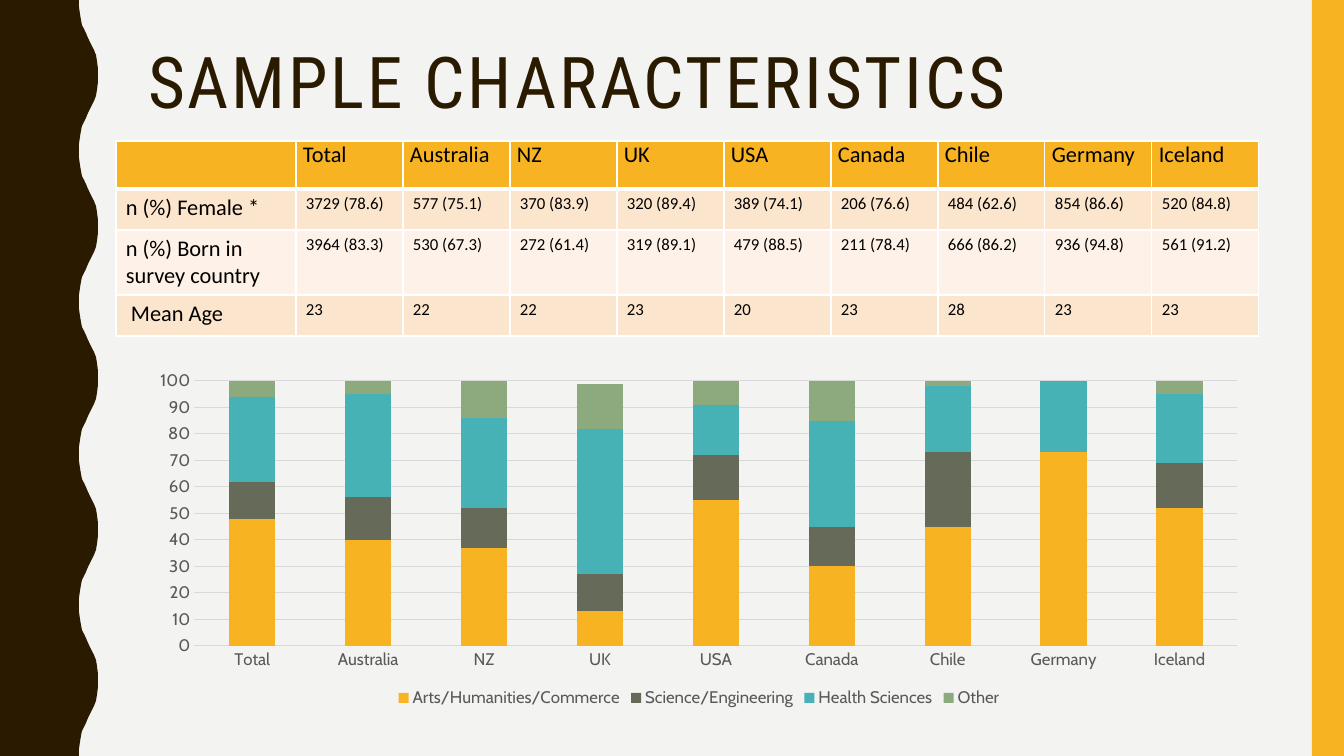
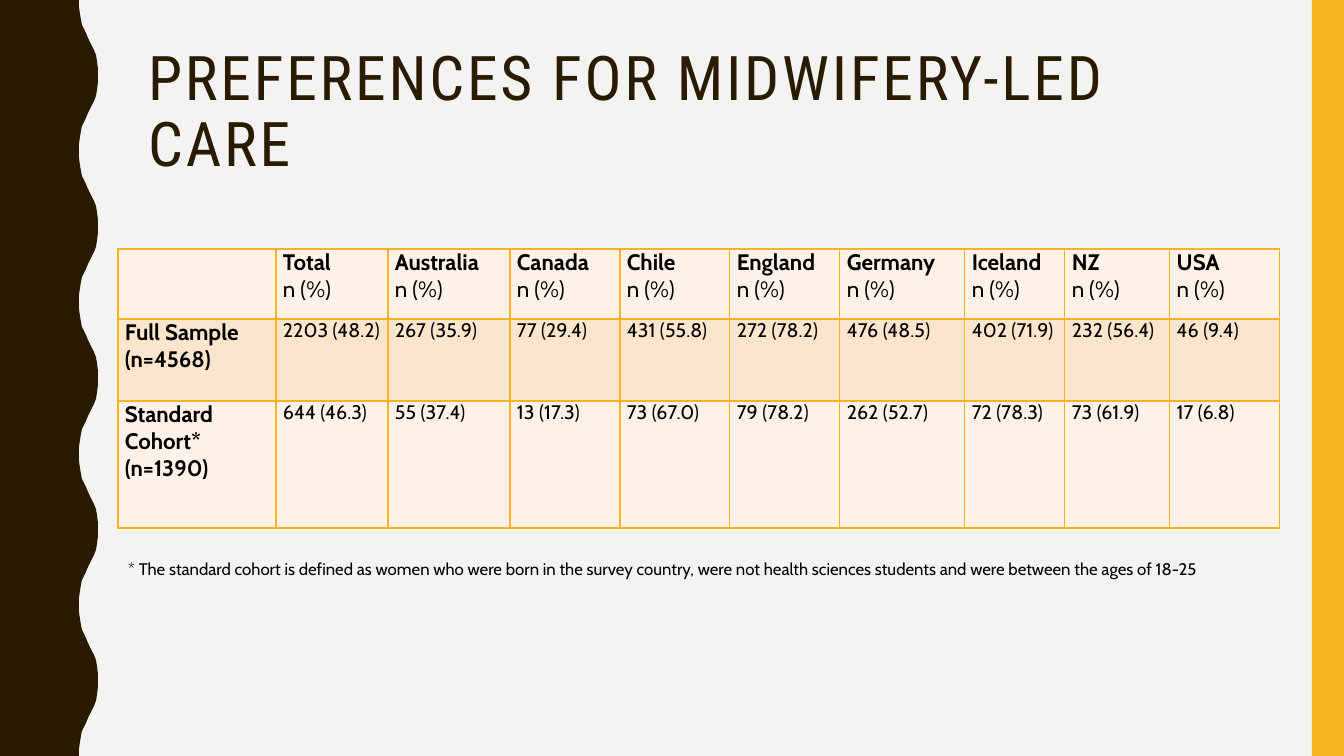
from lxml import etree
from pptx import Presentation
from pptx.chart.data import CategoryChartData
from pptx.dml.color import RGBColor
from pptx.enum.chart import XL_CHART_TYPE, XL_LEGEND_POSITION, XL_TICK_MARK
from pptx.enum.shapes import MSO_SHAPE
from pptx.enum.text import MSO_ANCHOR, MSO_AUTO_SIZE, PP_ALIGN
from pptx.oxml.ns import qn
from pptx.util import Pt

# Shared style
EMU_PER_PX = 914400 / 100.8
WIDTH, HEIGHT = 1344, 756
PAPER, BROWN, AMBER = "F3F3F2", "2A1A00", "F8B323"
PEACH, CREAM, WHITE, BLACK = "FCE5CD", "FEF2E8", "FFFFFF", "000000"
GREY, GRID = "595959", "D9D9D9"
SERIES_COLORS = [AMBER, "656A59", "46B2B5", "8CAA7E"]
TITLE_FONT, BODY_FONT, TABLE_FONT = "Roboto Condensed", "Cabin", "Calibri"

# Half a wave of the left band as (x, y); the other half mirrors it
WAVE_PERIOD, WAVE_COUNT = 151.2, 5
HALF_WAVE = [(79, 0), (79, 7), (80, 14), (81, 20), (82, 25), (84, 29), (86, 33),
             (88, 38), (90, 42), (92, 46), (94, 50), (96, 55), (97, 61), (98, 69)]

# Slide 1 content
COUNTRIES = ["Total", "Australia", "NZ", "UK", "USA", "Canada", "Chile",
             "Germany", "Iceland"]
SAMPLE = [
    ["n (%) Female *", "3729 (78.6)", "577 (75.1)", "370 (83.9)", "320 (89.4)",
     "389 (74.1)", "206 (76.6)", "484 (62.6)", "854 (86.6)", "520 (84.8)"],
    ["n (%) Born in survey country", "3964 (83.3)", "530 (67.3)", "272 (61.4)",
     "319 (89.1)", "479 (88.5)", "211 (78.4)", "666 (86.2)", "936 (94.8)",
     "561 (91.2)"],
    [" Mean Age", "23", "22", "22", "23", "20", "23", "28", "23", "23"],
]
FIELDS = {
    "Arts/Humanities/Commerce": [48, 40, 37, 13, 55, 30, 45, 73, 52],
    "Science/Engineering": [14, 16, 15, 14, 17, 15, 28, 0, 17],
    "Health Sciences": [32, 39, 34, 55, 19, 40, 25, 27, 26],
    "Other": [6, 5, 14, 17, 9, 15, 2, 0, 6],
}

# Slide 2 content
CARE_COUNTRIES = ["Total", "Australia", "Canada", "Chile", "England", "Germany",
                  "Iceland", "NZ", "USA"]
CARE = [
    (["Full Sample", "(n=4568)"],
     ["2203 (48.2)", "267 (35.9)", "77 (29.4)", "431 (55.8)", "272 (78.2)",
      "476 (48.5)", "402 (71.9)", "232 (56.4)", "46 (9.4)"]),
    (["Standard Cohort*", "(n=1390)"],
     ["644 (46.3)", "55 (37.4)", "13 (17.3)", "73 (67.0)", "79 (78.2)",
      "262 (52.7)", "72 (78.3)", "73 (61.9)", "17 (6.8)"]),
]
FOOTNOTE = ("* The standard cohort is defined as women who were born in the survey "
            "country, were not health sciences students and were between the ages "
            "of 18-25")


def px(n):
    return round(n * EMU_PER_PX)


def rgb(color):
    return RGBColor.from_string(color)


def set_font(font, size, color, name, bold=False):
    font.size, font.name, font.bold = Pt(size), name, bold
    font.color.rgb = rgb(color)


def add_run(p, text, size, color, name, bold=False):
    r = p.add_run()
    r.text = text
    set_font(r.font, size, color, name, bold)
    return r


def paint(sp, color):
    sp.shadow.inherit = False
    sp.fill.solid()
    sp.fill.fore_color.rgb = rgb(color)
    sp.line.fill.background()


def add_bands(s):
    # Wavy band on the left
    wave = HALF_WAVE + [(98, WAVE_PERIOD / 2)]
    wave += [(x, WAVE_PERIOD - y) for x, y in reversed(HALF_WAVE)]
    points = [(x, y + i * WAVE_PERIOD) for i in range(WAVE_COUNT) for x, y in wave]
    fb = s.shapes.build_freeform(0, 0, scale=EMU_PER_PX)
    fb.add_line_segments(points + [(0, HEIGHT)], close=True)
    paint(fb.convert_to_shape(), BROWN)
    # Straight band on the right
    paint(s.shapes.add_shape(MSO_SHAPE.RECTANGLE, px(1312), 0, px(32), px(HEIGHT)),
          AMBER)


def add_slide(prs, title, size, title_height):
    s = prs.slides.add_slide(prs.slide_layouts[5])
    s.background.fill.solid()
    s.background.fill.fore_color.rgb = rgb(PAPER)
    add_bands(s)
    sp = s.shapes.title
    sp.left, sp.top, sp.width, sp.height = map(px, (138, 42, 1122, title_height))
    tf = sp.text_frame
    tf.word_wrap, tf.auto_size = True, MSO_AUTO_SIZE.NONE
    tf.vertical_anchor = MSO_ANCHOR.TOP
    p = tf.paragraphs[0]
    p.alignment, p.line_spacing = PP_ALIGN.LEFT, 0.9
    r = add_run(p, title, size, BROWN, TITLE_FONT)
    r.font._element.set("spc", "200")
    return s


def set_borders(cell, color, top=1, bottom=1):
    tc_pr = cell._tc.get_or_add_tcPr()
    for side, width in (("L", 1), ("R", 1), ("T", top), ("B", bottom)):
        ln = etree.SubElement(tc_pr, qn(f"a:ln{side}"), w=str(Pt(width)))
        fill = etree.SubElement(ln, qn("a:solidFill"))
        etree.SubElement(fill, qn("a:srgbClr"), val=color)


def add_table(s, left, top, widths, heights, rows, fills, line, font,
              insets, header_rule=1):
    """Each cell is a list of (text, size, bold) paragraphs; insets go by row."""
    table = s.shapes.add_table(len(rows), len(widths), px(left), px(top),
                               px(sum(widths)), px(sum(heights))).table
    table.first_row = table.horz_banding = False
    for column, width in zip(table.columns, widths):
        column.width = px(width)
    for i, row in enumerate(rows):
        table.rows[i].height = px(heights[i])
        side, edge = insets[i]
        for j, lines in enumerate(row):
            cell = table.cell(i, j)
            cell.margin_left = cell.margin_right = px(side)
            cell.margin_top = cell.margin_bottom = px(edge)
            set_borders(cell, line, top=header_rule if i == 1 else 1,
                        bottom=header_rule if i == 0 else 1)
            cell.fill.solid()
            cell.fill.fore_color.rgb = rgb(fills[i])
            tf = cell.text_frame
            for k, (text, size, bold) in enumerate(lines):
                p = tf.add_paragraph() if k else tf.paragraphs[0]
                add_run(p, text, size, BLACK, font, bold)


def add_stacked_chart(s, left, top, width, height, categories, series):
    data = CategoryChartData()
    data.categories = categories
    for name, values in series.items():
        data.add_series(name, values)
    chart = s.shapes.add_chart(XL_CHART_TYPE.COLUMN_STACKED, px(left), px(top),
                               px(width), px(height), data).chart
    set_font(chart.font, 12, GREY, BODY_FONT)
    chart.has_title = False
    chart.has_legend = True
    chart.legend.position = XL_LEGEND_POSITION.BOTTOM
    chart.legend.include_in_layout = False
    set_font(chart.legend.font, 12, GREY, BODY_FONT)
    # Bars
    plot = chart.plots[0]
    plot.gap_width, plot.overlap, plot.vary_by_categories = 150, 100, False
    for ser, color in zip(plot.series, SERIES_COLORS):
        ser.format.fill.solid()
        ser.format.fill.fore_color.rgb = rgb(color)
    # Axes
    for axis in (chart.category_axis, chart.value_axis):
        axis.major_tick_mark = axis.minor_tick_mark = XL_TICK_MARK.NONE
        set_font(axis.tick_labels.font, 12, GREY, BODY_FONT)
    values = chart.value_axis
    values.minimum_scale, values.maximum_scale, values.major_unit = 0, 100, 10
    values.format.line.fill.background()
    for line in (chart.category_axis.format.line, values.major_gridlines.format.line):
        line.color.rgb = rgb(GRID)
        line.width = Pt(0.75)


def add_note(s, left, top, width, height, text):
    tf = s.shapes.add_textbox(px(left), px(top), px(width), px(height)).text_frame
    tf.word_wrap = True
    add_run(tf.paragraphs[0], text, 12, BLACK, BODY_FONT)


def sample_slide(prs):
    s = add_slide(prs, "SAMPLE CHARACTERISTICS", 51, 164)
    rows = [[[]] + [[(name, 16, False)] for name in COUNTRIES]]
    for label, *values in SAMPLE:
        rows.append([[(label, 16, False)]] + [[(v, 12, False)] for v in values])
    add_table(s, 116, 141, [180] + [107] * 9, [48, 41, 65, 41], rows,
              [AMBER, PEACH, CREAM, PEACH], WHITE, TABLE_FONT,
              [(7, 0)] + [(10, 5)] * 3, header_rule=3)
    add_stacked_chart(s, 138, 364, 1122, 348, COUNTRIES, FIELDS)


def care_slide(prs):
    s = add_slide(prs, "PREFERENCES FOR MIDWIFERY-LED CARE", 44, 106)
    rows = [[[]] + [[(name, 16, True), ("n (%)", 16, False)]
                    for name in CARE_COUNTRIES]]
    for labels, values in CARE:
        rows.append([[(text, 16, True) for text in labels]]
                    + [[(v, 14, False)] for v in values])
    add_table(s, 118, 249, [158, 112, 122, 110, 110, 110, 125, 100, 105, 110],
              [70, 82, 127], rows, [CREAM, PEACH, CREAM], AMBER, BODY_FONT,
              [(7, 0)] * 3)
    add_note(s, 118, 554, 1107, 30, FOOTNOTE)


def main():
    prs = Presentation()
    prs.slide_width, prs.slide_height = px(WIDTH), px(HEIGHT)
    sample_slide(prs)
    care_slide(prs)
    prs.save("out.pptx")


if __name__ == "__main__":
    main()
